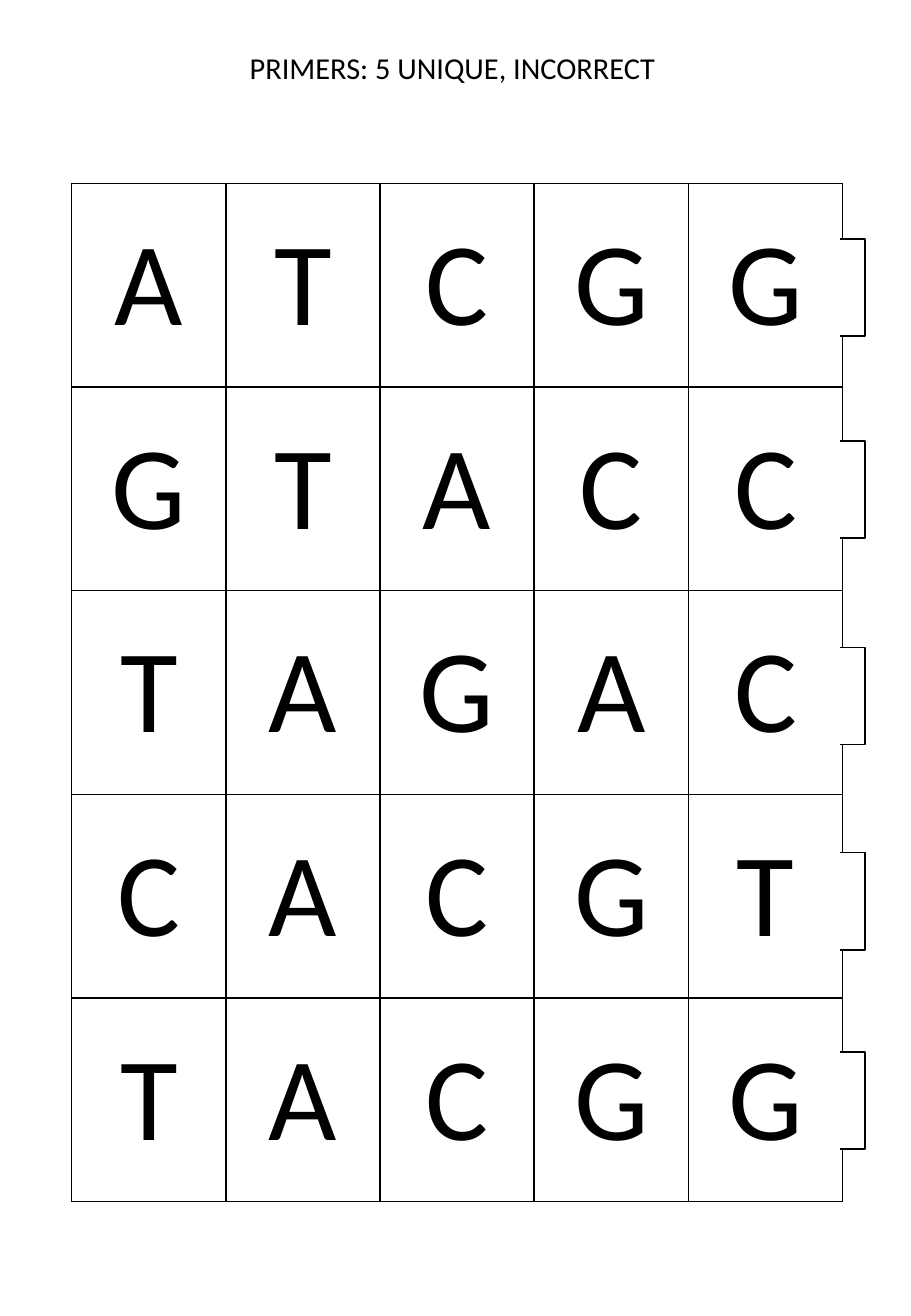
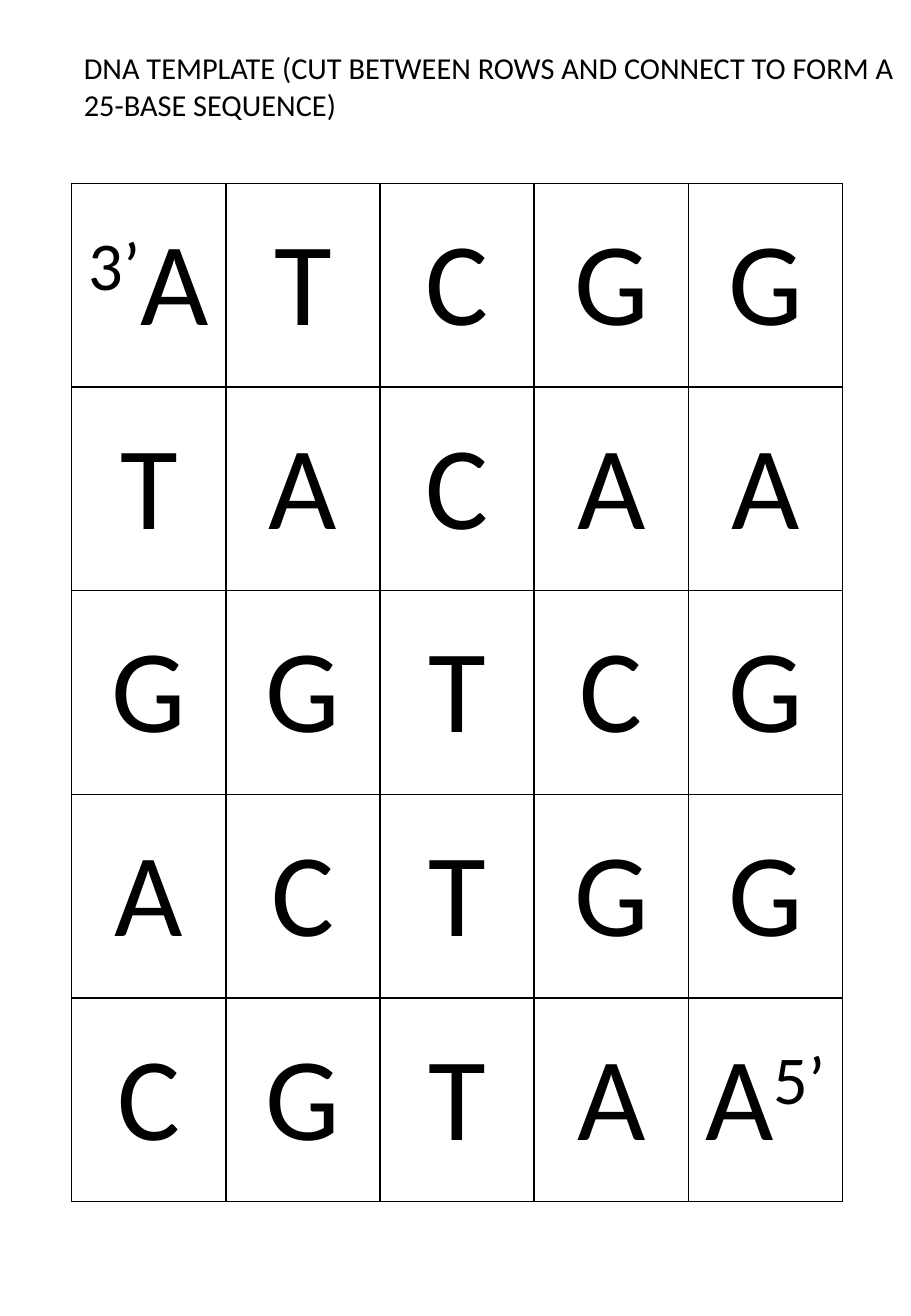
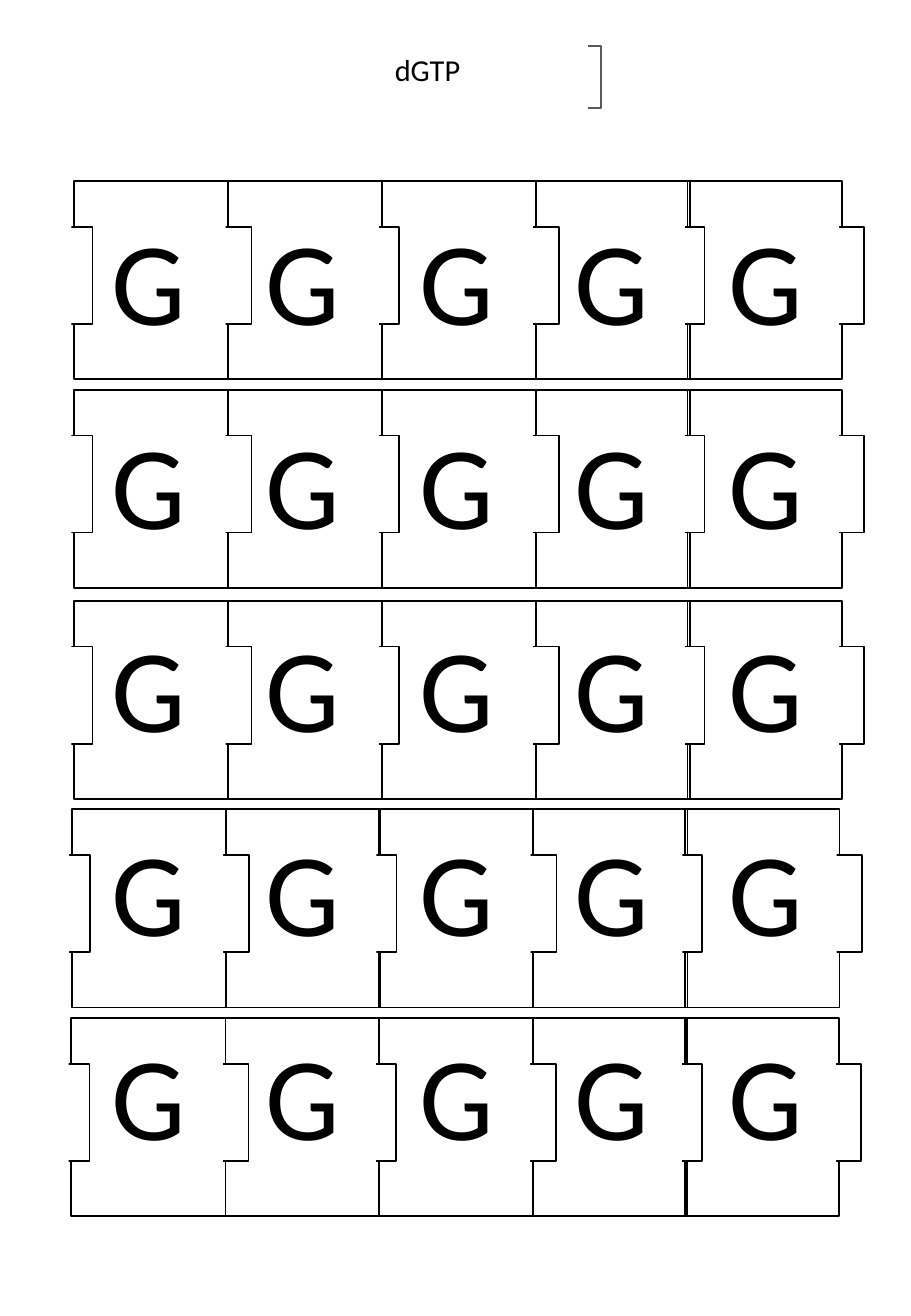
import pptx
import pptx.dml.color
import pptx.enum.shapes
import pptx.enum.text
import pptx.oxml
import pptx.oxml.ns
import pptx.util
from dataclasses import dataclass

Pt = pptx.util.Pt
RGB = pptx.dml.color.RGBColor
ALIGN = pptx.enum.text.PP_ALIGN
ANCHOR = pptx.enum.text.MSO_ANCHOR
RECT = pptx.enum.shapes.MSO_SHAPE.RECTANGLE


@dataclass(frozen=True)
class Theme:
    font: str = "Calibri"
    ink: RGB = RGB(0, 0, 0)
    paper: RGB = RGB(255, 255, 255)
    grey: RGB = RGB(0x59, 0x59, 0x59)
    title_size: float = 18
    base_size: float = 70
    line: float = 1


THEME = Theme()

# Content: one string per table row, cells separated by spaces; ^ wraps superscripts
PRIMERS = ["A T C G G", "G T A C C", "T A G A C", "C A C G T", "T A C G G"]
TEMPLATE = ["^3’^A T C G G", "T A C A A", "G G T C G", "A C T G G", "C G T A A^5’^"]
DGTP = ["G G G G G"] * 5

# Geometry in points
PAGE = (540, 780)
GRID_X, GRID_Y = 42.5, 108.7
CELL_W, CELL_H = 91.4, 120.7
TAB_W, TAB_H = 25.2, 57.6
MASK_W, MASK_OVER, MASK_UNDER, SEAM_GAP = 17.3, 12, 9, 1.6
PRIMER_TAB_Y = (141.8, 261.4, 383.8, 505.4, 623.5)
TILE_H = 117.4
TILE_X = (0, 91.4, 182.2, 273.6, 363.6)
SEAM_X = TILE_X + (455,)
TILE_TAB_X = (-14.4, 79.9, 167.3, 262, 348.5, 443)
TILE_TAB_DROP = 27.1
TILE_ROWS = ((44, 107.3), (44, 231), (44, 356.2), (42.6, 479.7), (42.3, 603.5))


def add_title(slide, text, x, y, w, h, align=ALIGN.LEFT):
    title = slide.shapes.title
    title.left, title.top, title.width, title.height = map(Pt, (x, y, w, h))
    tf = title.text_frame
    tf.word_wrap = True
    tf.auto_size = pptx.enum.text.MSO_AUTO_SIZE.SHAPE_TO_FIT_TEXT
    tf.vertical_anchor = ANCHOR.TOP
    tf.text = text
    style_paragraph(tf.paragraphs[0], THEME.title_size, align)


def style_paragraph(p, size, align):
    p.alignment = align
    p.font.name, p.font.size = THEME.font, Pt(size)
    p.font.color.rgb = THEME.ink


def set_borders(cell, ruled):
    tcPr = cell._tc.get_or_add_tcPr()
    fill = (f'<a:solidFill><a:srgbClr val="{THEME.ink}"/></a:solidFill>'
            if ruled else "<a:noFill/>")
    for side in "LRTB":
        tcPr.append(pptx.oxml.parse_xml(
            f'<a:ln{side} {pptx.oxml.ns.nsdecls("a")} w="{int(Pt(THEME.line))}">'
            f"{fill}</a:ln{side}>"))


def add_bases(slide, rows, ruled=True):
    """Add the table of bases, with or without cell borders."""
    n = len(rows)
    table = slide.shapes.add_table(n, n, Pt(GRID_X), Pt(GRID_Y),
                                   Pt(n * CELL_W), Pt(n * CELL_H)).table
    table.first_row = table.horz_banding = False
    for i, row in enumerate(rows):
        table.rows[i].height = Pt(CELL_H)
        table.columns[i].width = Pt(CELL_W)
        for j, text in enumerate(row.split()):
            cell = table.cell(i, j)
            set_borders(cell, ruled)
            cell.fill.background()
            cell.vertical_anchor = ANCHOR.MIDDLE
            p = cell.text_frame.paragraphs[0]
            style_paragraph(p, THEME.base_size, ALIGN.CENTER)
            for k, part in enumerate(text.split("^")):
                if part:
                    r = p.add_run()
                    r.text = part
                    if k % 2:
                        r.font._element.set("baseline", "30000")


def add_box(shapes, x, y, w, h, fill=None, line=None):
    sp = shapes.add_shape(RECT, Pt(x), Pt(y), Pt(w), Pt(h))
    sp.shadow.inherit = False
    if fill is None:
        sp.fill.background()
    else:
        sp.fill.solid()
        sp.fill.fore_color.rgb = fill
    if line is None:
        sp.line.fill.background()
    else:
        sp.line.color.rgb = line
        sp.line.width = Pt(THEME.line)


def add_tab(shapes, x, y, seam, w=TAB_W, h=TAB_H, line=THEME.ink):
    """Add a tab whose part left of the seam is masked, so it looks open."""
    add_box(shapes, x, y, w, h, THEME.paper, line)
    add_box(shapes, seam - SEAM_GAP - MASK_W, y - MASK_OVER,
            MASK_W, h + MASK_OVER + MASK_UNDER, THEME.paper)


def add_tile_row(slide, x, y):
    shapes = slide.shapes.add_group_shape().shapes
    for dx in TILE_X:
        add_box(shapes, x + dx, y, CELL_W, TILE_H, line=THEME.ink)
    for dx, seam in zip(TILE_TAB_X, SEAM_X):
        add_tab(shapes, x + dx, y + TILE_TAB_DROP, x + seam)


def main():
    prs = pptx.Presentation()
    prs.slide_width, prs.slide_height = map(Pt, PAGE)
    primers, template, dgtp = (prs.slides.add_slide(prs.slide_layouts[5])
                               for _ in range(3))

    add_title(primers, "PRIMERS: 5 UNIQUE, INCORRECT", 127.5, 25.4, 281.5, 29,
              ALIGN.CENTER)
    add_bases(primers, PRIMERS)
    edge = GRID_X + 5 * CELL_W
    for y in PRIMER_TAB_Y:
        add_tab(primers.shapes, edge - 11.8, y, edge)

    add_title(template, "DNA TEMPLATE (CUT BETWEEN ROWS AND CONNECT TO FORM A "
              "25-BASE SEQUENCE)", 42.5, 25.6, 497.5, 51)
    add_bases(template, TEMPLATE)

    add_title(dgtp, "dGTP", 226.8, 26.6, 101.5, 29)
    add_bases(dgtp, DGTP, ruled=False)
    for x, y in TILE_ROWS:
        add_tile_row(dgtp, x, y)
    add_tab(dgtp.shapes, 335.5, 27.4, 350.1, 20.9, 36.7, THEME.grey)

    prs.save("out.pptx")


if __name__ == "__main__":
    main()
